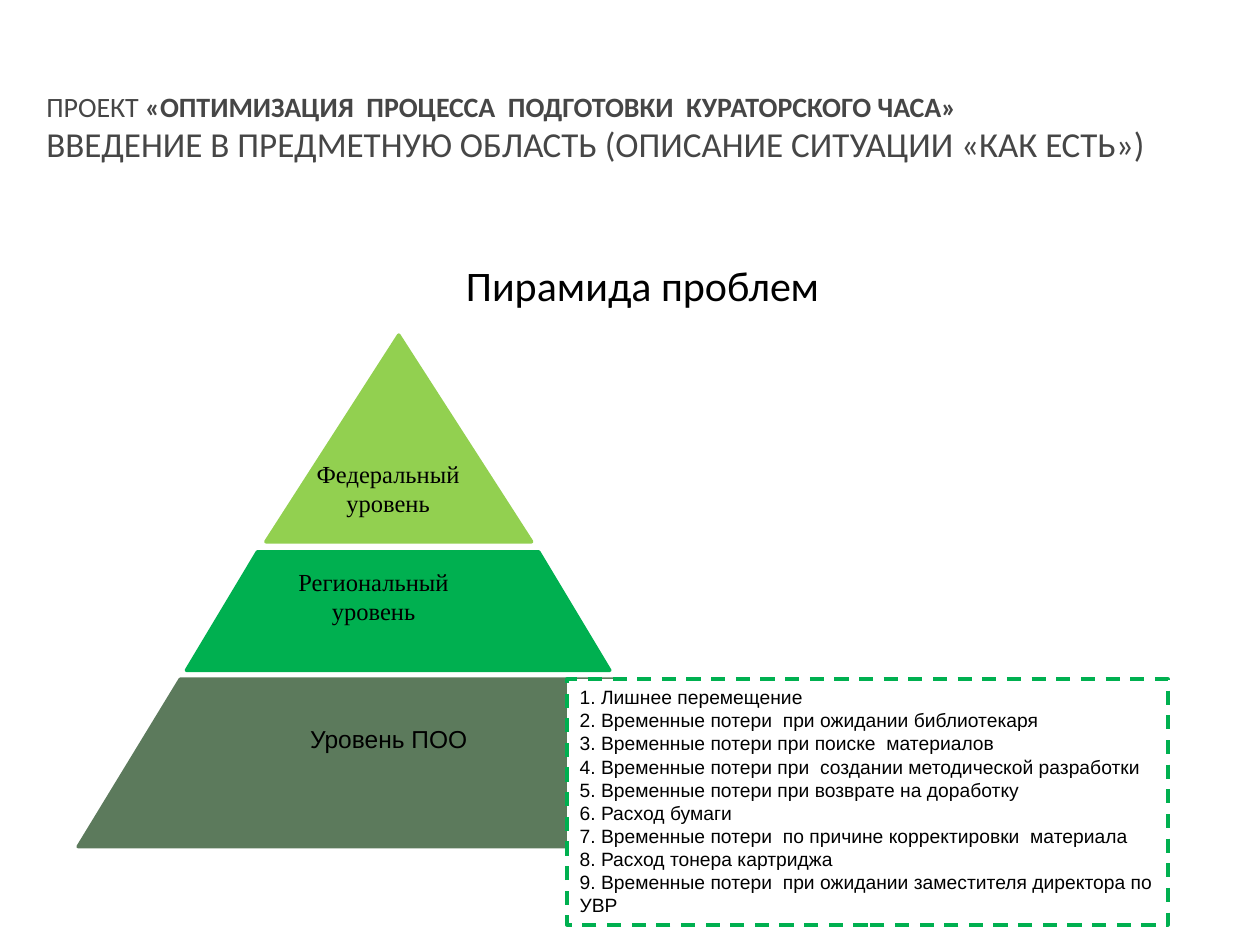
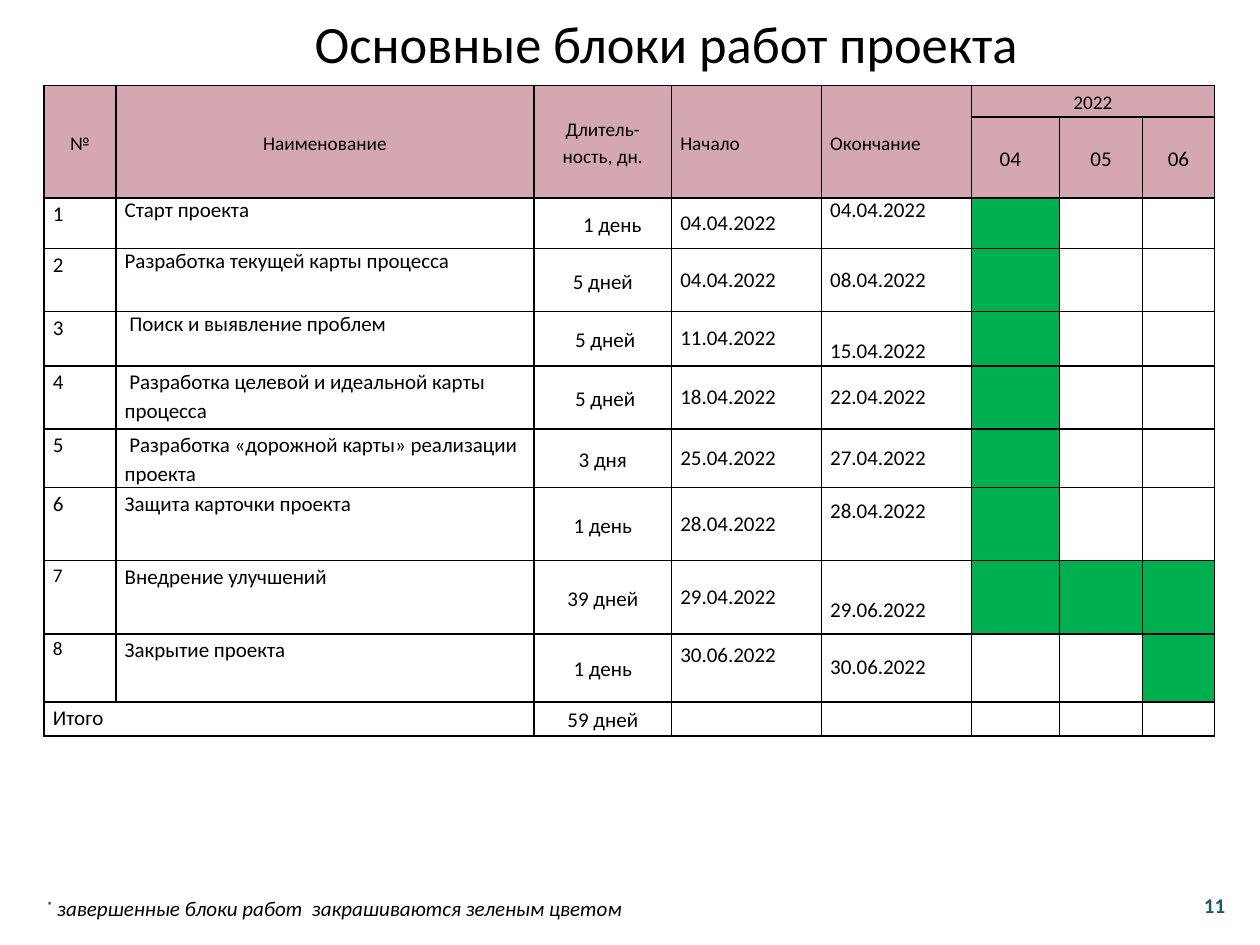
from typing import NamedTuple

from lxml.etree import SubElement
from pptx import Presentation
from pptx.dml.color import RGBColor
from pptx.enum.dml import MSO_LINE
from pptx.enum.shapes import MSO_SHAPE as Preset
from pptx.enum.text import MSO_ANCHOR as Anchor, PP_ALIGN as Align
from pptx.oxml.ns import qn
from pptx.util import Inches, Pt

COLORS = {
    "text": "000000",
    "heading": "464646",
    "number": "215968",
    "federal": "92D050",
    "green": "00B050",
    "college": "5C7A5C",
    "header": "D5A7B1",
    "white": "FFFFFF",
}
SANS, ARIAL, SERIF = "Calibri", "Arial", "Times New Roman"
LINE_SPACING = 1.15
HALF_LINE = 0.1
CELL_SIDE = 0.07


class Box(NamedTuple):
    left: float
    top: float
    width: float
    height: float

    def lengths(self) -> list:
        return [Inches(value) for value in self]


class Level(NamedTuple):
    preset: Preset
    box: Box
    adjustment: float
    color: str


class Caption(NamedTuple):
    text: str
    box: Box
    font: str
    outline: str = ""


class Work(NamedTuple):
    name: str
    duration: str
    start: str
    end: str
    months: tuple
    height: float
    start_shift: float = 0
    end_shift: float = 0
    name_spacing: float = LINE_SPACING
    number_size: int = 12
    duration_indent: float = 0


LEVELS = [
    Level(Preset.ISOSCELES_TRIANGLE, Box(2.11, 2.66, 2.11, 1.64), 0.5, "federal"),
    Level(Preset.TRAPEZOID, Box(1.48, 4.38, 3.36, 0.94), 0.6, "green"),
    Level(Preset.TRAPEZOID, Box(0.62, 5.39, 5.08, 1.33), 0.61, "college"),
]
CAPTIONS = [
    Caption("Уровень ПОО", Box(1.64, 5.7, 2.89, 0.34), ARIAL, "college"),
    Caption("Региональный уровень", Box(1.95, 4.45, 2.03, 0.57), SERIF),
    Caption("Федеральный уровень", Box(2.34, 3.59, 1.48, 0.57), SERIF),
]
PROBLEMS = [
    "Лишнее перемещение",
    "Временные потери  при ожидании библиотекаря",
    "Временные потери при поиске  материалов",
    "Временные потери при  создании методической разработки",
    "Временные потери при возврате на доработку",
    "Расход бумаги",
    "Временные потери  по причине корректировки  материала",
    "Расход тонера картриджа",
    "Временные потери  при ожидании заместителя директора по УВР",
]
MONTHS = ["04", "05", "06"]
COLUMN_WIDTHS = [0.57, 3.32, 1.09, 1.19, 1.19, 0.7, 0.66, 0.57]
HEADER_HEIGHTS = [0.25, 0.64]
TOTAL_HEIGHT = 0.27
HEADINGS = [
    ("№", Align.CENTER),
    ("Наименование", Align.CENTER),
    ("Длитель-\nность, дн.", Align.CENTER),
    ("Начало", Align.LEFT),
    ("Окончание", Align.LEFT),
]
WORKS = [
    Work("Старт проекта", "1 день", "04.04.2022", "04.04.2022", ("04",), 0.4,
         end_shift=-HALF_LINE, name_spacing=1, duration_indent=0.15),
    Work("Разработка текущей карты процесса", "5 дней", "04.04.2022", "08.04.2022",
         ("04",), 0.5, name_spacing=1),
    Work(" Поиск и выявление проблем", " 5 дней", "11.04.2022", "15.04.2022",
         ("04",), 0.43, end_shift=HALF_LINE, name_spacing=1),
    Work(" Разработка целевой и идеальной карты процесса", " 5 дней",
         "18.04.2022", "22.04.2022", ("04",), 0.5),
    Work(" Разработка «дорожной карты» реализации проекта", "3 дня",
         "25.04.2022", "27.04.2022", ("04",), 0.46),
    Work("Защита карточки проекта", "1 день", "28.04.2022", "28.04.2022",
         ("04",), 0.58, end_shift=-HALF_LINE),
    Work("Внедрение улучшений", "39 дней", "29.04.2022", "29.06.2022",
         ("04", "05", "06"), 0.58, end_shift=HALF_LINE, number_size=11),
    Work("Закрытие проекта", "1 день", "30.06.2022", "30.06.2022",
         ("06",), 0.54, start_shift=-HALF_LINE, number_size=11),
]


def rgb(name: str) -> RGBColor:
    return RGBColor.from_string(COLORS[name])


def write(paragraph, text: str, *, size=12, font=SANS, color="text", bold=False,
          italic=False, align=Align.LEFT, spacing=1.0, baseline=0):
    paragraph.alignment = align
    paragraph.line_spacing = spacing
    paragraph.space_before = paragraph.space_after = Pt(0)
    run = paragraph.add_run()
    run.text = text
    run.font.size = Pt(size)
    run.font.name = font
    run.font.bold = bold
    run.font.italic = italic
    run.font.color.rgb = rgb(color)
    if baseline:
        run.font._element.set("baseline", str(baseline * 1000))


def write_lines(frame, lines: list, **style) -> None:
    frame.word_wrap = True
    for index, line in enumerate(lines):
        paragraph = frame.add_paragraph() if index else frame.paragraphs[0]
        write(paragraph, line, **style)


def place(shape, box: Box) -> None:
    shape.left, shape.top, shape.width, shape.height = box.lengths()


def set_title(slide, text: str, box: Box, size: int) -> None:
    title = slide.shapes.title
    place(title, box)
    title.text_frame.vertical_anchor = Anchor.MIDDLE
    write_lines(title.text_frame, [text], size=size, align=Align.CENTER)


def add_text_box(slide, box: Box, anchor=Anchor.TOP):
    frame = slide.shapes.add_textbox(*box.lengths()).text_frame
    frame.word_wrap = True
    frame.vertical_anchor = anchor
    return frame


def add_level(slide, level: Level) -> None:
    shape = slide.shapes.add_shape(level.preset, *level.box.lengths())
    shape.adjustments[0] = level.adjustment
    shape.shadow.inherit = False
    shape.fill.solid()
    shape.fill.fore_color.rgb = rgb(level.color)
    shape.line.color.rgb = rgb(level.color)
    shape.line.width = Pt(2)


def add_caption(slide, caption: Caption) -> None:
    shape = slide.shapes.add_textbox(*caption.box.lengths())
    if caption.outline:
        shape.line.color.rgb = rgb(caption.outline)
        shape.line.width = Pt(0.75)
    write_lines(shape.text_frame, [caption.text], size=14, font=caption.font,
                align=Align.CENTER)


def fill_problem_list(slide) -> None:
    problems = slide.placeholders[1]
    place(problems, Box(4.5, 5.39, 4.77, 1.95))
    problems.fill.solid()
    problems.fill.fore_color.rgb = rgb("white")
    problems.line.color.rgb = rgb("green")
    problems.line.width = Pt(2)
    problems.line.dash_style = MSO_LINE.DASH
    lines = [f"{number}. {problem}" for number, problem in enumerate(PROBLEMS, 1)]
    write_lines(problems.text_frame, lines, size=11, font=ARIAL)
    for paragraph in problems.text_frame.paragraphs:
        properties = paragraph._p.get_or_add_pPr()
        properties.set("marL", "0")
        properties.set("indent", "0")
        SubElement(properties, qn("a:buNone"))
    problems.element.getparent().append(problems.element)


def build_pyramid(deck) -> None:
    slide = deck.slides.add_slide(deck.slide_layouts[1])
    set_title(slide, "Пирамида проблем", Box(0.35, 1.96, 9.5, 0.6), 24)
    heading = add_text_box(slide, Box(0.27, 0.38, 9.87, 1.26), Anchor.MIDDLE)
    project = heading.paragraphs[0]
    write(project, "ПРОЕКТ ", size=16, color="heading")
    write(project, "«ОПТИМИЗАЦИЯ  ПРОЦЕССА  ПОДГОТОВКИ  КУРАТОРСКОГО ЧАСА»",
          size=16, color="heading", bold=True)
    write(heading.add_paragraph(),
          "ВВЕДЕНИЕ В ПРЕДМЕТНУЮ ОБЛАСТЬ (ОПИСАНИЕ СИТУАЦИИ «КАК ЕСТЬ»)",
          size=20, color="heading")
    for level in LEVELS:
        add_level(slide, level)
    for caption in CAPTIONS:
        add_caption(slide, caption)
    fill_problem_list(slide)


def format_cell(cell) -> None:
    cell.margin_left = cell.margin_right = Inches(CELL_SIDE)
    cell.margin_top = cell.margin_bottom = 0
    cell.vertical_anchor = Anchor.MIDDLE
    properties = cell._tc.get_or_add_tcPr()
    for side in ("lnL", "lnR", "lnT", "lnB"):
        border = SubElement(properties, qn(f"a:{side}"), w=str(Pt(1)))
        SubElement(SubElement(border, qn("a:solidFill")), qn("a:srgbClr"),
                   val=COLORS["text"])
    cell.fill.background()


def paint(cell, color: str) -> None:
    cell.fill.solid()
    cell.fill.fore_color.rgb = rgb(color)


def fill_cell(cell, text: str, shift=0.0, anchor=Anchor.MIDDLE, **style) -> None:
    cell.vertical_anchor = anchor
    cell.margin_top = Inches(max(2 * shift, 0))
    cell.margin_bottom = Inches(max(-2 * shift, 0))
    write_lines(cell.text_frame, text.split("\n"), **style)


def fill_header(table) -> None:
    style = {"align": Align.CENTER, "spacing": LINE_SPACING}
    for column, (heading, align) in enumerate(HEADINGS):
        table.cell(0, column).merge(table.cell(1, column))
        fill_cell(table.cell(0, column), heading, size=11, align=align,
                  spacing=LINE_SPACING)
    first_month = len(HEADINGS)
    table.cell(0, first_month).merge(table.cell(0, len(COLUMN_WIDTHS) - 1))
    fill_cell(table.cell(0, first_month), "2022", size=11, **style)
    for column, month in enumerate(MONTHS, first_month):
        fill_cell(table.cell(1, column), month, **style)
    table.cell(1, first_month).margin_right = Inches(CELL_SIDE + 0.08)
    for row in range(len(HEADER_HEIGHTS)):
        for column in range(len(COLUMN_WIDTHS)):
            paint(table.cell(row, column), "header")


def fill_work(table, row: int, number: int, work: Work) -> None:
    cells = [table.cell(row, column) for column in range(len(COLUMN_WIDTHS))]
    fill_cell(cells[0], str(number), anchor=Anchor.TOP, size=work.number_size,
              spacing=LINE_SPACING)
    fill_cell(cells[1], work.name, anchor=Anchor.TOP, spacing=work.name_spacing)
    fill_cell(cells[2], work.duration, align=Align.CENTER, spacing=LINE_SPACING)
    cells[2].margin_left = Inches(CELL_SIDE + work.duration_indent)
    fill_cell(cells[3], work.start, shift=work.start_shift)
    fill_cell(cells[4], work.end, shift=work.end_shift)
    for cell, month in zip(cells[len(HEADINGS):], MONTHS):
        if month in work.months:
            paint(cell, "green")


def add_schedule(slide) -> None:
    heights = [*HEADER_HEIGHTS, *(work.height for work in WORKS), TOTAL_HEIGHT]
    box = Box(0.35, 0.68, sum(COLUMN_WIDTHS), sum(heights))
    table = slide.shapes.add_table(len(heights), len(COLUMN_WIDTHS), *box.lengths()).table
    table.first_row = table.horz_banding = False
    for column, width in zip(table.columns, COLUMN_WIDTHS):
        column.width = Inches(width)
    for row, height in zip(table.rows, heights):
        row.height = Inches(height)
    for cell in table.iter_cells():
        format_cell(cell)
    fill_header(table)
    for number, work in enumerate(WORKS, 1):
        fill_work(table, number + len(HEADER_HEIGHTS) - 1, number, work)
    total = len(heights) - 1
    table.cell(total, 0).merge(table.cell(total, 1))
    fill_cell(table.cell(total, 0), "Итого", anchor=Anchor.TOP, spacing=LINE_SPACING)
    fill_cell(table.cell(total, 2), "59 дней", align=Align.CENTER, spacing=LINE_SPACING)
    for cell in table.iter_cells():
        if not cell.text:
            SubElement(cell.text_frame.paragraphs[0]._p, qn("a:endParaRPr"), sz="1200")


def build_schedule(deck) -> None:
    slide = deck.slides.add_slide(deck.slide_layouts[5])
    set_title(slide, "Основные блоки работ проекта", Box(0.54, 0, 9.5, 0.68), 30)
    add_schedule(slide)
    note = add_text_box(slide, Box(0.27, 7.06, 8.51, 0.3)).paragraphs[0]
    write(note, "*", italic=True, baseline=30)
    write(note, " завершенные блоки работ  закрашиваются зеленым цветом", italic=True)
    page = add_text_box(slide, Box(9.45, 7.03, 0.38, 0.31), Anchor.MIDDLE)
    page.margin_left = page.margin_right = 0
    write(page.paragraphs[0], "11", color="number", bold=True, align=Align.CENTER)


def main() -> None:
    deck = Presentation()
    deck.slide_width, deck.slide_height = Inches(10), Inches(7.5)
    build_pyramid(deck)
    build_schedule(deck)
    deck.save("out.pptx")


if __name__ == "__main__":
    main()
